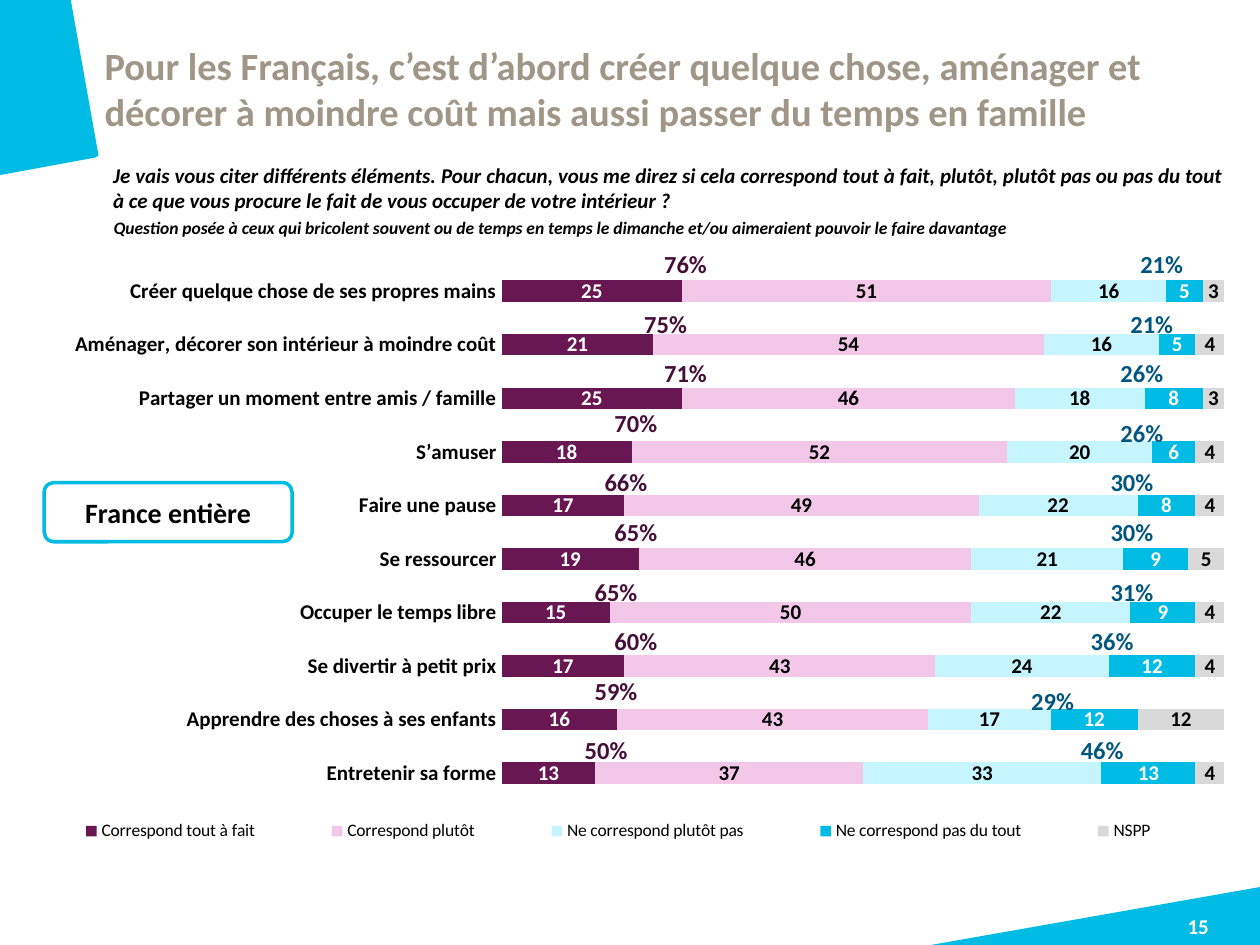
from pptx import Presentation
from pptx.chart.data import CategoryChartData
from pptx.dml.color import RGBColor
from pptx.enum.chart import XL_CHART_TYPE as ChartType, XL_LEGEND_POSITION as LegendAt
from pptx.enum.chart import XL_TICK_MARK as Tick
from pptx.enum.shapes import MSO_SHAPE as Shape
from pptx.enum.text import MSO_ANCHOR as Anchor, PP_ALIGN as Align
from pptx.oxml import parse_xml
from pptx.oxml.ns import nsdecls, qn
from pptx.util import Inches, Mm, Pt

FONT = "Calibri"
CYAN, TAUPE, BLACK, WHITE = "00BCE4", "A09687", "000000", "FFFFFF"
PLUM, NAVY = "460F37", "005680"

# Boxes are (left, top, width, height) on a grid of 2 mm squares
CORNER_BOX = (0, 0, 9.91, 17.65)
WEDGE_BOX = (93.85, 89.41, 33.15, 5.84)
NUMBER_BOX = (114.55, 92.08, 12.45, 3.18)
TITLE_BOX = (10.54, 4.19, 116.46, 6.22)
QUESTION_BOX = (10.16, 15.75, 114.43, 3.81)
BASE_BOX = (4.45, 21.21, 104, 3.43)
CHART_BOX = (-6.35, 24.64, 130.81, 60.96)
SAMPLE_BOX = (4.45, 48.64, 25, 5.97)

ANSWERS = [  # name, bar colour, label colour, values
    ("Correspond tout à fait", "691752", WHITE, (25, 21, 25, 18, 17, 19, 15, 17, 16, 13)),
    ("Correspond plutôt", "F3C7E7", BLACK, (51, 54, 46, 52, 49, 46, 50, 43, 43, 37)),
    ("Ne correspond plutôt pas", "C7F5FF", BLACK, (16, 16, 18, 20, 22, 21, 22, 24, 17, 33)),
    ("Ne correspond pas du tout", CYAN, WHITE, (5, 5, 8, 6, 8, 9, 9, 12, 12, 13)),
    ("NSPP", "D9D9D9", BLACK, (3, 4, 3, 4, 4, 5, 4, 4, 12, 4)),
]
ELEMENTS = [  # label, then (total, column, row) for each side
    ("Créer quelque chose de ses propres mains", (76, 8, 0), (21, 11, 0)),
    ("Aménager, décorer son intérieur à moindre coût", (75, 6, 6), (21, 10, 6)),
    ("Partager un moment entre amis / famille", (71, 8, 11), (26, 9, 11)),
    ("S’amuser", (70, 3, 16), (26, 9, 17)),
    ("Faire une pause", (66, 2, 22), (30, 8, 22)),
    ("Se ressourcer", (65, 3, 27), (30, 8, 27)),
    ("Occuper le temps libre", (65, 1, 33), (31, 8, 33)),
    ("Se divertir à petit prix", (60, 3, 38), (36, 6, 38)),
    ("Apprendre des choses à ses enfants", (59, 1, 43), (29, 0, 44)),
    ("Entretenir sa forme", (50, 0, 49), (46, 5, 49)),
]
SIDES = [(63.45, PLUM), (108.45, NAVY)]  # first column in the chart, colour


def rgb(value):
    return RGBColor.from_string(value)


def grid(*lengths):
    return [Mm(2 * length) for length in lengths]


def style(font, size, color, bold=False, italic=False):
    font.name, font.size = FONT, Pt(size)
    font.bold, font.italic = bold, italic
    font.color.rgb = rgb(color)


def write(frame, text, size, color, align=Align.LEFT, italic=False, inset=None):
    frame.word_wrap = True
    if inset is not None:
        frame.margin_left = frame.margin_right = inset
        frame.margin_top = frame.margin_bottom = inset
    paragraph = frame.paragraphs[0]
    paragraph.alignment = align
    run = paragraph.add_run()
    run.text = text
    style(run.font, size, color, True, italic)


def text_box(slide, box, *args, **options):
    write(slide.shapes.add_textbox(*grid(*box)).text_frame, *args, **options)


def rounded_label(slide, box, text, size, color, line=None):
    label = slide.shapes.add_shape(Shape.ROUNDED_RECTANGLE, *grid(*box))
    label.shadow.inherit = False
    label.fill.background()
    if line:
        label.line.color.rgb = rgb(line)
        label.line.width = Pt(2)
    else:
        label.line.fill.background()
    label.text_frame.vertical_anchor = Anchor.MIDDLE
    write(label.text_frame, text, size, color, Align.CENTER)


def cyan_outline(slide, box, shares):
    left, top, width, height = grid(*box)
    points = [(left + width * x, top + height * y) for x, y in shares]
    builder = slide.shapes.build_freeform(*points[0])
    builder.add_line_segments(points[1:], close=True)
    outline = builder.convert_to_shape()
    outline.shadow.inherit = False
    outline.fill.solid()
    outline.fill.fore_color.rgb = rgb(CYAN)
    outline.line.fill.background()


def decoration(slide):
    cyan_outline(slide, WEDGE_BOX, [(0, 1), (1, 0), (1, 1)])
    cyan_outline(slide, CORNER_BOX,
                 [(0, 1), (0, 0), (0.72, 0), (1, 0.88), (1, 0.89), (0.97, 0.9)])
    text_box(slide, NUMBER_BOX, "15", 12, WHITE, Align.CENTER, inset=0)


def heading(slide):
    text_box(slide, TITLE_BOX, "Pour les Français, c’est d’abord créer quelque chose, aménager et "
             "décorer à moindre coût mais aussi passer du temps en famille", 22, TAUPE, inset=0)
    text_box(slide, QUESTION_BOX, "Je vais vous citer différents éléments. Pour chacun, vous me "
             "direz si cela correspond tout à fait, plutôt, plutôt pas ou pas du tout à ce que "
             "vous procure le fait de vous occuper de votre intérieur ?",
             12, BLACK, Align.JUSTIFY, italic=True)
    text_box(slide, BASE_BOX, "Question posée à ceux qui bricolent souvent ou de temps en temps "
             "le dimanche et/ou aimeraient pouvoir le faire davantage",
             10, BLACK, Align.CENTER, italic=True)


def set_layout(parent, index, x, y, w, h, inner=False):
    for old in parent.findall(qn("c:layout")):
        parent.remove(old)
    target = '<c:layoutTarget val="inner"/>' if inner else ""
    parent.insert(index, parse_xml(
        f'<c:layout {nsdecls("c")}><c:manualLayout>{target}'
        '<c:xMode val="edge"/><c:yMode val="edge"/>'
        f'<c:x val="{x}"/><c:y val="{y}"/><c:w val="{w}"/><c:h val="{h}"/>'
        '</c:manualLayout></c:layout>'))


def answers_chart(slide, box):
    data = CategoryChartData()
    data.categories = [label for label, *_ in ELEMENTS]
    for name, _, _, values in ANSWERS:
        data.add_series(name, values)
    chart = slide.shapes.add_chart(ChartType.BAR_STACKED_100, *grid(*box), data).chart
    style(chart.font, 18, TAUPE)
    chart.has_title = False

    # Bars
    plot = chart.plots[0]
    plot.gap_width, plot.overlap, plot.vary_by_categories = 150, 100, False
    for series, (_, fill, label_color, _) in zip(plot.series, ANSWERS):
        series.format.fill.solid()
        series.format.fill.fore_color.rgb = rgb(fill)
        series.data_labels.show_value = True
        style(series.data_labels.font, 12, label_color, True)

    # Axes
    names = chart.category_axis
    names.reverse_order = True
    names.major_tick_mark = Tick.NONE
    names.format.line.fill.background()
    style(names.tick_labels.font, 12, BLACK, True)
    chart.value_axis.has_major_gridlines = False
    chart.value_axis.visible = False

    # Legend and plot area
    chart.has_legend = True
    chart.legend.position = LegendAt.BOTTOM
    chart.legend.include_in_layout = False
    style(chart.legend.font, 10, BLACK)
    set_layout(chart.legend._element, 1, 0.06, 0.94, 0.93, 0.06)
    plot_area = plot._element.getparent()
    set_layout(plot_area, 0, 0.435, 0.033, 0.557, 0.886, inner=True)


def totals(slide, box):
    for _, *sums in ELEMENTS:
        for (first, color), (total, column, row) in zip(SIDES, sums):
            place = (box[0] + first + column, box[1] + row, 8, 3.94)
            rounded_label(slide, place, f"{total}%", 14, color)


def main():
    deck = Presentation()
    deck.slide_width, deck.slide_height = Inches(10), Inches(7.5)
    slide = deck.slides.add_slide(deck.slide_layouts[6])
    decoration(slide)
    heading(slide)
    answers_chart(slide, CHART_BOX)
    totals(slide, CHART_BOX)
    rounded_label(slide, SAMPLE_BOX, "France entière", 16, BLACK, line=CYAN)
    deck.save("out.pptx")


if __name__ == "__main__":
    main()
